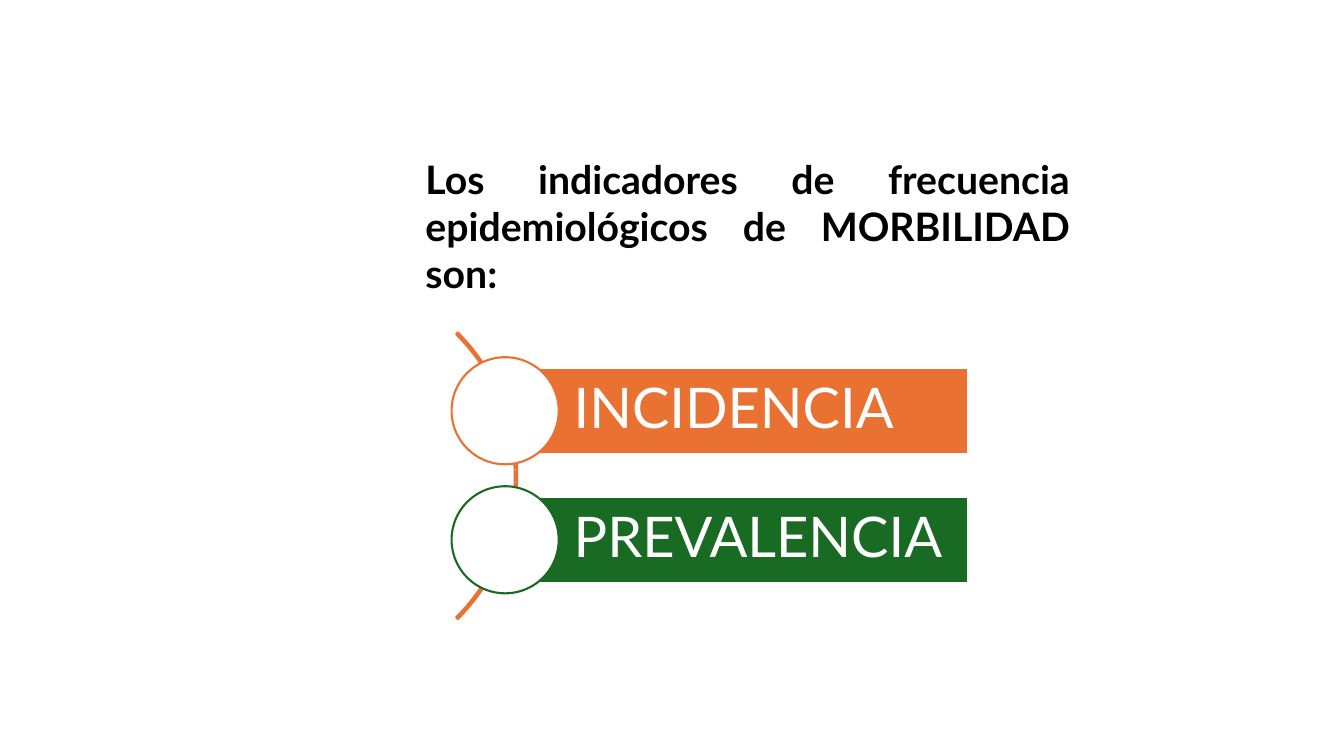
from pptx import Presentation
from pptx.dml.color import RGBColor
from pptx.enum.shapes import MSO_SHAPE as Shape
from pptx.enum.text import MSO_ANCHOR as Anchor, MSO_AUTO_SIZE as Fit, PP_ALIGN as Align
from pptx.util import Inches, Pt

BLACK = RGBColor(0x00, 0x00, 0x00)
WHITE = RGBColor(0xFF, 0xFF, 0xFF)
ORANGE = RGBColor(0xE9, 0x71, 0x32)
GREEN = RGBColor(0x19, 0x6B, 0x24)
FONT = "Lato"


def set_font(para, size, color, bold=False):
    """Set the font of a whole paragraph."""
    font = para.font
    font.name, font.size, font.bold = FONT, Pt(size), bold
    font.color.rgb = color


def add_form(slide, kind, box, line, fill=None):
    """Add a flat outlined shape in box, filled if a fill is given."""
    form = slide.shapes.add_shape(kind, *map(Inches, box))
    form.shadow.inherit = False
    form.line.color.rgb = line
    form.line.width = Pt(1.5)
    if fill is None:
        form.fill.background()
    else:
        form.fill.solid()
        form.fill.fore_color.rgb = fill
    return form


def add_title(slide, box, text):
    """Place the justified heading in the title placeholder."""
    title = slide.shapes.title
    title.left, title.top, title.width, title.height = map(Inches, box)
    frame = title.text_frame
    frame.text = text
    frame.word_wrap = True
    frame.auto_size = Fit.NONE
    frame.vertical_anchor = Anchor.TOP
    para = frame.paragraphs[0]
    para.alignment = Align.JUSTIFY
    set_font(para, 28, BLACK, True)


def add_bar(slide, box, text, color):
    """Draw a labelled bar with a circle centred on its left edge."""
    left, top, width, height = box
    bar = add_form(slide, Shape.RECTANGLE, box, WHITE, color)
    frame = bar.text_frame
    frame.text = text
    frame.word_wrap = True
    frame.vertical_anchor = Anchor.MIDDLE
    frame.margin_left = Inches(0.68)
    frame.margin_top = frame.margin_right = frame.margin_bottom = Inches(0.11)
    para = frame.paragraphs[0]
    para.alignment = Align.LEFT
    para.line_spacing = 0.9
    set_font(para, 40, WHITE)
    size = height * 1.25
    spot = left - size / 2, top + (height - size) / 2, size, size
    add_form(slide, Shape.OVAL, spot, color, WHITE)


def add_list(slide, box, items):
    """Draw the arc and the evenly spaced bars along it."""
    left, top, width, height = box
    arc = add_form(slide, Shape.BLOCK_ARC, (left - 3.37, top - 0.58, 4.02, 4.02), ORANGE)
    for i, value in enumerate((189, 27, 0.006)):
        arc.adjustments[i] = value
    tall, step = 0.85, 1.28
    first = top + (height - tall - step * (len(items) - 1)) / 2
    for i, (text, color) in enumerate(items):
        add_bar(slide, (left + 0.53, first + i * step, width - 0.53, tall), text, color)


def main():
    """Build and save the slide."""
    deck = Presentation()
    deck.slide_width, deck.slide_height = Inches(13.33), Inches(7.5)
    slide = deck.slides.add_slide(deck.slide_layouts[5])
    add_title(slide, (4.12, 1.49, 6.59, 2.73),
              "Los indicadores de frecuencia epidemiológicos de MORBILIDAD son:")
    add_list(slide, (4.48, 3.29, 5.12, 2.85),
             [("INCIDENCIA", ORANGE), ("PREVALENCIA", GREEN)])
    deck.save("out.pptx")


if __name__ == "__main__":
    main()
